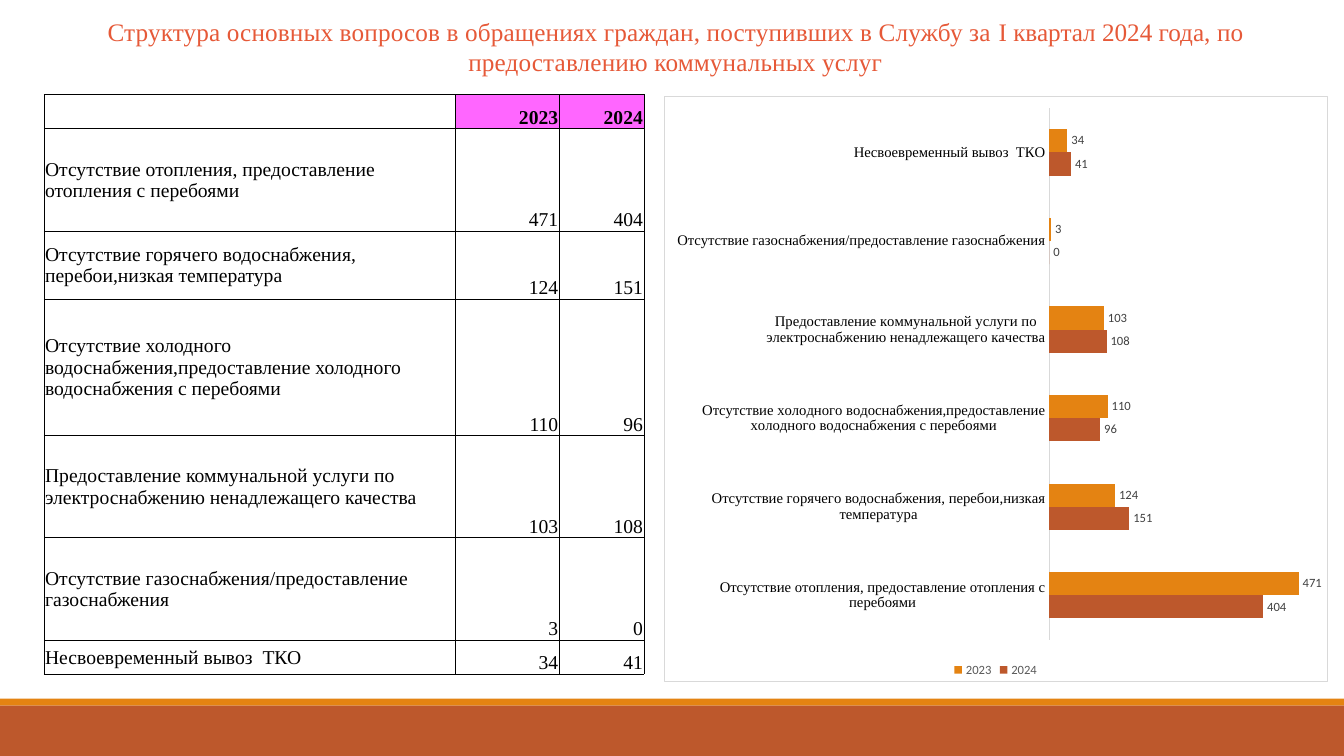
from collections import namedtuple
from dataclasses import dataclass

from lxml.etree import SubElement
from pptx import Presentation
from pptx.chart.data import CategoryChartData
from pptx.dml.color import RGBColor
from pptx.enum.chart import XL_CHART_TYPE as ChartType, XL_LABEL_POSITION as LabelPos
from pptx.enum.chart import XL_LEGEND_POSITION as LegendPos, XL_TICK_MARK as Tick
from pptx.enum.shapes import MSO_SHAPE as Shape
from pptx.enum.text import MSO_ANCHOR as Anchor, MSO_AUTO_SIZE as AutoSize, PP_ALIGN as Align
from pptx.oxml import parse_xml
from pptx.oxml.ns import nsdecls, qn
from pptx.util import Pt

Box = namedtuple("Box", "left top width height")


@dataclass(frozen=True)
class Theme:
    """Colours, fonts and type sizes of the slide."""
    heading: str = "E65938"
    text: str = "000000"
    label: str = "404040"
    legend: str = "595959"
    header: str = "FF66FF"
    border: str = "D9D9D9"
    paper: str = "FFFFFF"
    year_2023: str = "E48312"
    year_2024: str = "BD582C"
    serif: str = "Times New Roman"
    sans: str = "Calibri"
    title_size: float = 18
    table_size: float = 14
    axis_size: float = 10.5
    chart_size: float = 10
    small_size: float = 9


THEME = Theme()
TITLE = [
    ("Структура основных вопросов в обращениях граждан, поступивших в Службу за ", 10),
    ("I квартал 2024 года, ", 0),
    ("по предоставлению коммунальных услуг", 10),
]
QUESTIONS = [
    ("Отсутствие отопления, предоставление отопления с перебоями", 471, 404),
    ("Отсутствие горячего водоснабжения, перебои,низкая температура", 124, 151),
    ("Отсутствие холодного водоснабжения,предоставление холодного водоснабжения с перебоями", 110, 96),
    ("Предоставление коммунальной услуги по электроснабжению ненадлежащего качества", 103, 108),
    ("Отсутствие газоснабжения/предоставление газоснабжения", 3, 0),
    ("Несвоевременный вывоз  ТКО", 34, 41),
]
COLUMN_WIDTHS = (293.8, 74.2, 60.5)
ROW_UNITS = (1, 3, 2, 4, 3, 3, 1)


def style_font(font, face, size, color, bold=False):
    """Set the face, size, colour and weight of a font."""
    font.name, font.size, font.bold = face, Pt(size), bold
    font.color.rgb = RGBColor.from_string(color)


def paint(fill, color):
    """Apply a solid colour to a fill."""
    fill.solid()
    fill.fore_color.rgb = RGBColor.from_string(color)


def add_footer(slide, box):
    """Draw the thin stripe and the wide band at the foot of the slide."""
    stripe_height = 5
    parts = [
        (box.top, stripe_height, THEME.year_2023),
        (box.top + stripe_height, box.height - stripe_height, THEME.year_2024),
    ]
    for top, height, color in parts:
        band = slide.shapes.add_shape(
            Shape.RECTANGLE, Pt(box.left), Pt(top), Pt(box.width), Pt(height))
        band.shadow.inherit = False
        paint(band.fill, color)
        band.line.fill.background()


def add_heading(slide, box):
    """Place the heading in the title placeholder."""
    heading = slide.shapes.title
    heading.left, heading.top, heading.width, heading.height = map(Pt, box)
    frame = heading.text_frame
    frame.word_wrap, frame.auto_size = True, AutoSize.NONE
    frame.vertical_anchor = Anchor.TOP
    line = frame.paragraphs[0]
    line.alignment = Align.CENTER
    for words, spacing in TITLE:
        run = line.add_run()
        run.text = words
        style_font(run.font, THEME.serif, THEME.title_size, THEME.heading)
        run.font._element.set("spc", str(spacing))


def add_borders(cell):
    """Give a cell a thin line on each side."""
    properties = cell._tc.get_or_add_tcPr()
    for position, side in enumerate("LRTB"):
        properties.insert(position, parse_xml(
            f'<a:ln{side} {nsdecls("a")} w="6350"><a:solidFill>'
            f'<a:srgbClr val="{THEME.text}"/></a:solidFill></a:ln{side}>'))


def fill_cell(cell, value, is_header, is_number):
    """Write one table cell with its fill, alignment and borders."""
    cell.margin_left = cell.margin_right = cell.margin_top = Pt(0.7)
    cell.margin_bottom = Pt(0)
    cell.vertical_anchor = Anchor.BOTTOM if is_number else Anchor.MIDDLE
    if is_header and is_number:
        paint(cell.fill, THEME.header)
    else:
        cell.fill.background()
    add_borders(cell)
    if value != "":
        line = cell.text_frame.paragraphs[0]
        line.alignment = Align.RIGHT if is_number else Align.LEFT
        run = line.add_run()
        run.text = str(value)
        style_font(run.font, THEME.serif, THEME.table_size, THEME.text, is_header)


def add_questions_table(slide, box):
    """Build the table of questions by year."""
    rows = [("", "2023", "2024"), *QUESTIONS]
    table = slide.shapes.add_table(len(rows), len(COLUMN_WIDTHS), *map(Pt, box)).table
    table.first_row = table.horz_banding = False
    for column, width in zip(table.columns, COLUMN_WIDTHS):
        column.width = Pt(width)
    for row, units in zip(table.rows, ROW_UNITS):
        row.height = Pt(box.height * units / sum(ROW_UNITS))
    for r, values in enumerate(rows):
        for c, value in enumerate(values):
            fill_cell(table.cell(r, c), value, r == 0, c > 0)


def frame_chart(chart):
    """Give the chart area a white fill and a grey border."""
    area = parse_xml(
        f'<c:spPr {nsdecls("c", "a")}><a:solidFill><a:srgbClr val="{THEME.paper}"/></a:solidFill>'
        f'<a:ln w="9525"><a:solidFill><a:srgbClr val="{THEME.border}"/></a:solidFill></a:ln></c:spPr>')
    chart._chartSpace.find(qn("c:chart")).addnext(area)


def add_questions_chart(slide, box):
    """Build the bar chart comparing the two years."""
    names, counts_2023, counts_2024 = zip(*QUESTIONS)
    data = CategoryChartData()
    data.categories = names
    data.add_series("2024", counts_2024)
    data.add_series("2023", counts_2023)
    chart = slide.shapes.add_chart(ChartType.BAR_CLUSTERED, *map(Pt, box), data).chart
    style_font(chart.font, THEME.sans, THEME.chart_size, THEME.text)
    frame_chart(chart)
    chart.has_title = False
    chart.has_legend = True
    chart.legend.position = LegendPos.BOTTOM
    chart.legend.include_in_layout = False
    style_font(chart.legend.font, THEME.sans, THEME.small_size, THEME.legend)

    questions, counts = chart.category_axis, chart.value_axis
    questions.major_tick_mark = questions.minor_tick_mark = Tick.NONE
    questions.format.line.width = Pt(0.75)
    questions.format.line.color.rgb = RGBColor.from_string(THEME.border)
    style_font(questions.tick_labels.font, THEME.serif, THEME.axis_size, THEME.text)
    counts.visible = counts.has_major_gridlines = False
    counts.minimum_scale = 0

    bars = chart.plots[0]
    bars.gap_width, bars.overlap, bars.vary_by_categories = 182, 0, False
    for year, color in zip(bars.series, (THEME.year_2024, THEME.year_2023)):
        paint(year.format.fill, color)
        year.invert_if_negative = False
        labels = year.data_labels
        labels.show_value, labels.position = True, LabelPos.OUTSIDE_END
        style_font(labels.font, THEME.sans, THEME.small_size, THEME.label)


def main():
    """Assemble and save the slide."""
    deck = Presentation()
    deck.slide_width, deck.slide_height = Pt(960), Pt(540)
    slide = deck.slides.add_slide(deck.slide_layouts[5])
    add_footer(slide, Box(0, 499, 960, 41))
    add_heading(slide, Box(16, 8, 933, 51))
    add_questions_chart(slide, Box(474, 68.5, 474.5, 418.5))
    add_questions_table(slide, Box(31.5, 67.5, sum(COLUMN_WIDTHS), 414))
    deck.save("out.pptx")


if __name__ == "__main__":
    main()
